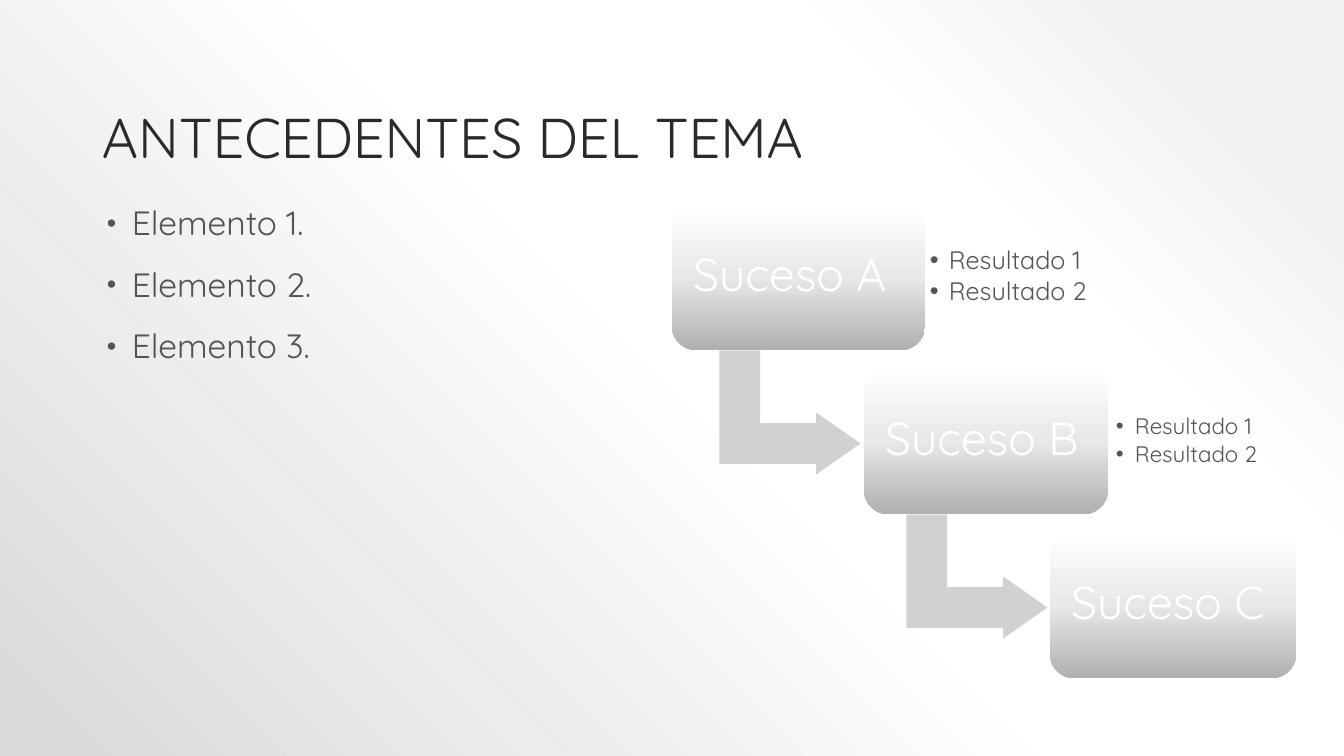
import pptx
import pptx.util
import pptx.dml.color
import pptx.enum.shapes
import pptx.enum.text
import pptx.oxml
import pptx.oxml.ns
import lxml.etree

PX = 914400 / 100.8  # EMU in one px
FONT = "Quicksand"
COLOURS = {
    "title": "2A2A2A", "text": "545454", "white": "FFFFFF", "arrow": "D1D1D1",
    "pale": "F2F2F2", "grey": "D9D9D9", "middle": "E8E8E8", "dark": "B0B0B0",
}
qn = pptx.oxml.ns.qn


def paint_gradient(holder, stops, direction):
    """Replace the solid fill in holder with a gradient."""
    marks = "".join(
        f'<a:gs pos="{place * 1000}"><a:srgbClr val="{COLOURS[name]}"/></a:gs>'
        for place, name in stops)
    gradient = pptx.oxml.parse_xml(
        f'<a:gradFill {pptx.oxml.ns.nsdecls("a")} rotWithShape="1">'
        f'<a:gsLst>{marks}</a:gsLst>{direction}</a:gradFill>')
    holder.replace(holder.find(qn("a:solidFill")), gradient)


def write_text(shape, lines, size, colour, anchor="TOP", inset=None,
               before=0, after=0, hang=0, bullet_size=100):
    """Fill shape with one paragraph a line; hang is the bullet indent in px."""
    frame = shape.text_frame
    frame.word_wrap = True
    frame.vertical_anchor = pptx.enum.text.MSO_ANCHOR[anchor]
    if inset:
        frame.margin_left = frame.margin_right = round(inset * PX)
        frame.margin_top = frame.margin_bottom = round(inset * PX)
    for index, line in enumerate(lines):
        para = frame.add_paragraph() if index else frame.paragraphs[0]
        para.alignment = pptx.enum.text.PP_ALIGN.LEFT
        para.line_spacing = 0.9
        para.space_before = pptx.util.Pt(before)
        props = para._p.get_or_add_pPr()
        spacing = lxml.etree.SubElement(props, qn("a:spcAft"))
        lxml.etree.SubElement(spacing, qn("a:spcPct"), val=str(after * 1000))
        if hang:
            props.set("marL", str(round((hang + (5 if before else 0)) * PX)))
            props.set("indent", str(-round(hang * PX)))
            tint = lxml.etree.SubElement(props, qn("a:buClr"))
            lxml.etree.SubElement(tint, qn("a:srgbClr"), val=COLOURS[colour])
            lxml.etree.SubElement(props, qn("a:buSzPct"), val=str(bullet_size * 1000))
            lxml.etree.SubElement(props, qn("a:buFont"), typeface="Arial")
            lxml.etree.SubElement(props, qn("a:buChar"), char="•")
        span = para.add_run()
        span.text = line
        span.font.name = FONT
        span.font.size = pptx.util.Pt(size)
        span.font.color.rgb = pptx.dml.color.RGBColor.from_string(COLOURS[colour])


deck = pptx.Presentation()
deck.slide_width = round(1344 * PX)
deck.slide_height = round(756 * PX)
page = deck.slides.add_slide(deck.slide_layouts[6])
shapes = page.shapes
kinds = pptx.enum.shapes.MSO_SHAPE

# Background, radiating from the top right corner
page.background.fill.solid()
paint_gradient(
    page.element.find(".//" + qn("p:bgPr")),
    [(10, "pale"), (28, "white"), (48, "white"), (100, "grey")],
    '<a:path path="circle"><a:fillToRect l="100000" b="100000"/></a:path>')

# Title and list of elements
title = shapes.add_textbox(*(round(n * PX) for n in (92, 30, 1076, 146)))
write_text(title, ["ANTECEDENTES DEL TEMA"], 40, "title", anchor="BOTTOM")
body = shapes.add_textbox(*(round(n * PX) for n in (92, 202, 562, 479)))
write_text(body, [f"Elemento {n}." for n in (1, 2, 3)], 24, "text",
           before=18, hang=25, bullet_size=80)

# Descending steps: name, left, width, arrow left, results (left, width, size)
steps = [
    ("Suceso A", 672, 253, 728, (923, 185, 18)),
    ("Suceso B", 864, 244, 915, (1109, 168, 16)),
    ("Suceso C", 1050, 246, None, None),
]
for row, (name, left, width, arrow_left, results) in enumerate(steps):
    top = 204 + 164 * row

    # Arrow to the next step
    if arrow_left:
        arrow = shapes.add_shape(kinds.BENT_UP_ARROW, *(
            round(n * PX) for n in (arrow_left, top + 138, 124, 141)))
        arrow.rotation = 90
        for index, value in enumerate((0.328, 0.25, 0.358)):
            arrow.adjustments[index] = value
        arrow.shadow.inherit = False
        arrow.fill.solid()
        arrow.fill.fore_color.rgb = pptx.dml.color.RGBColor.from_string(COLOURS["arrow"])
        arrow.line.fill.background()

    # Step box
    box = shapes.add_shape(kinds.ROUNDED_RECTANGLE, *(
        round(n * PX) for n in (left, top, width, 146)))
    box.adjustments[0] = 0.167
    box.shadow.inherit = False
    box.fill.solid()
    paint_gradient(box._element.spPr, [(0, "white"), (50, "middle"), (100, "dark")],
                   '<a:lin ang="5400000" scaled="0"/>')
    box.line.fill.background()
    write_text(box, [name], 33, "white", anchor="MIDDLE", inset=14, after=35)

    # Results beside the step
    if results:
        results_left, results_width, size = results
        notes = shapes.add_textbox(*(
            round(n * PX) for n in (results_left, top + 14, results_width, 118)))
        write_text(notes, ["Resultado 1", "Resultado 2"], size, "text",
                   anchor="MIDDLE", inset=7, after=15, hang=19)

deck.save("out.pptx")
